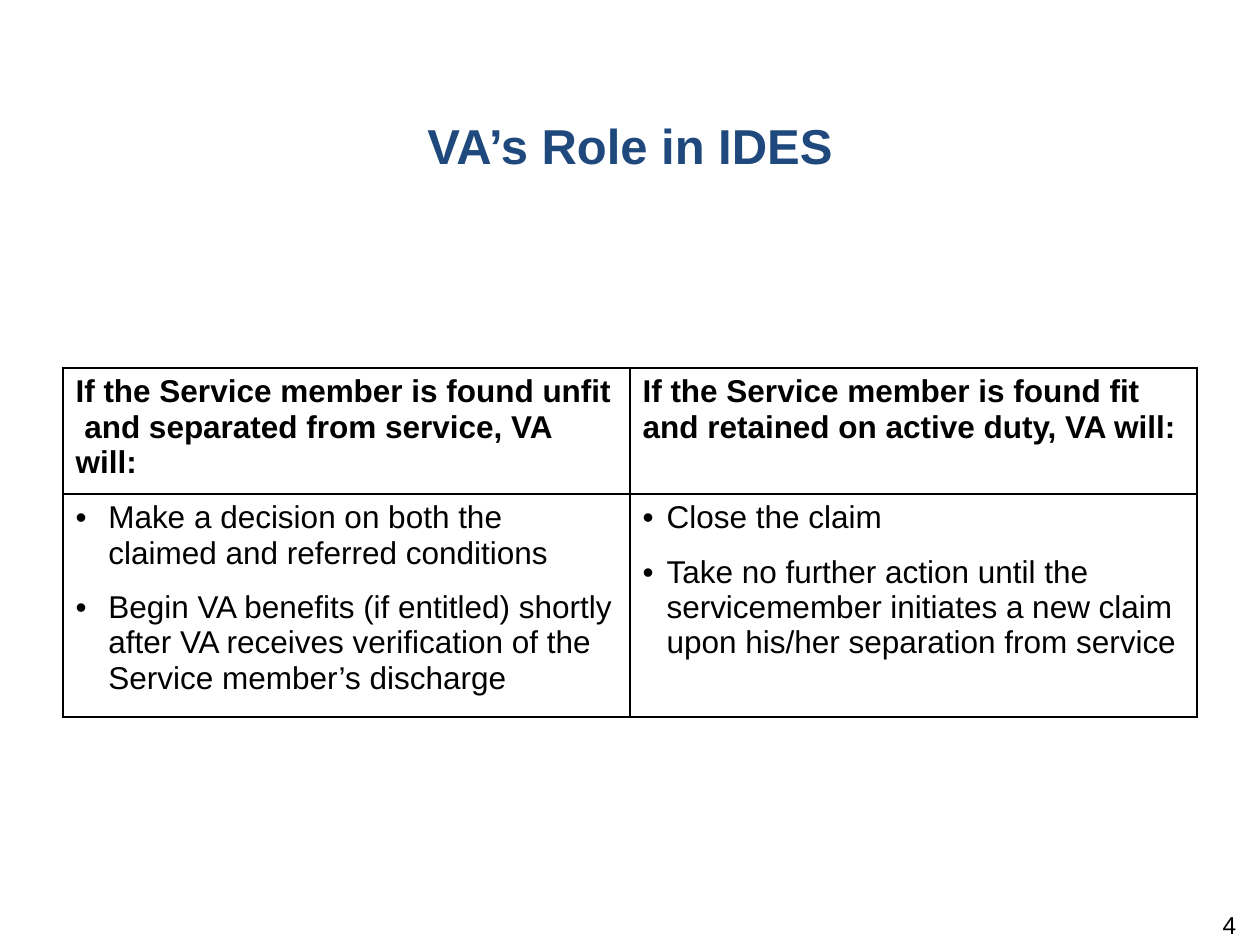
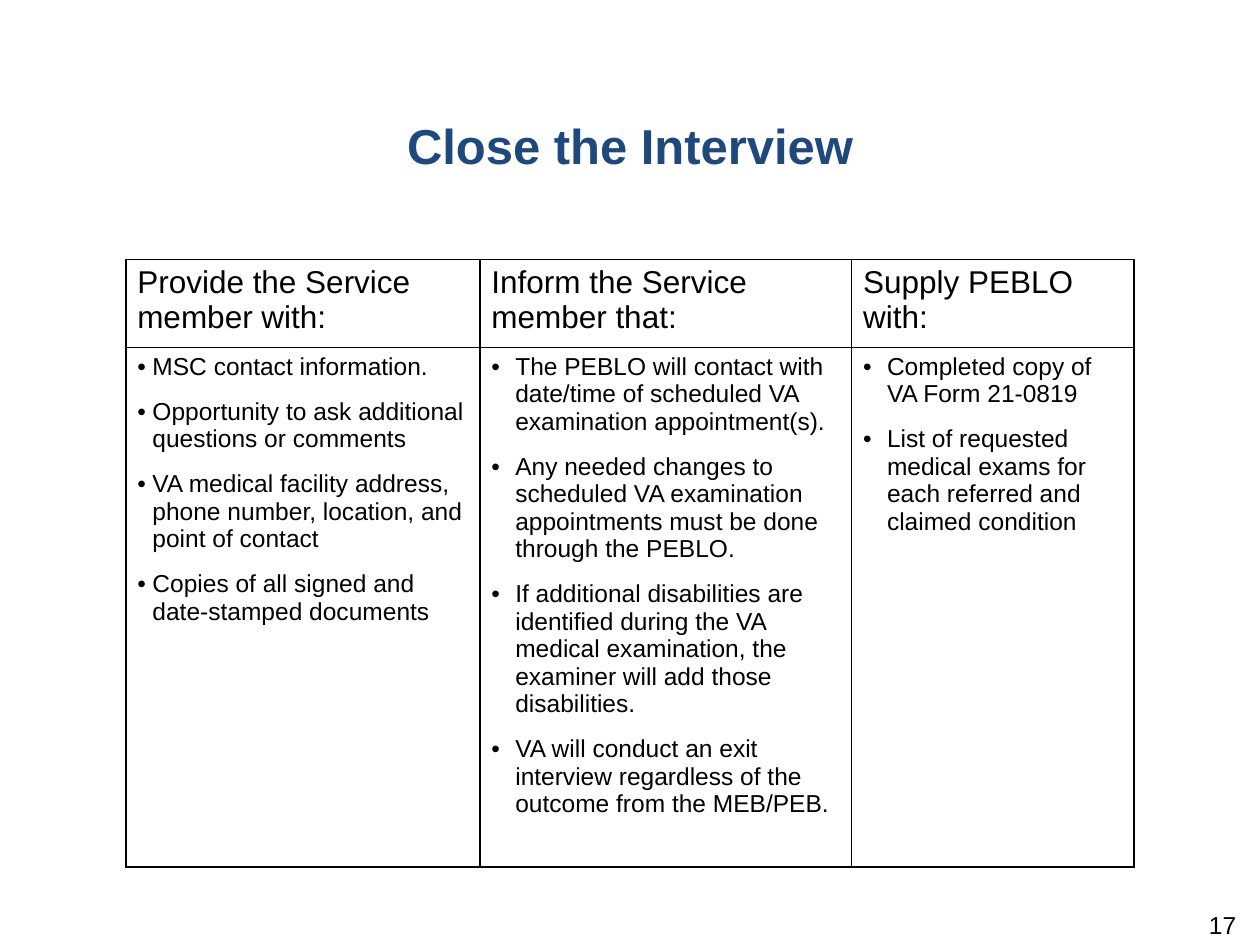
from lxml import etree
from pptx import Presentation
from pptx.dml.color import RGBColor
from pptx.enum.text import MSO_ANCHOR, MSO_AUTO_SIZE, PP_ALIGN
from pptx.oxml.ns import qn
from pptx.util import Inches, Pt

NAVY = RGBColor(0x1F, 0x49, 0x7D)
BLACK = RGBColor(0, 0, 0)
WHITE = RGBColor(0xFF, 0xFF, 0xFF)
FONT = "Arial"
TITLE_ONLY = 5


class Deck:
    def __init__(self):
        self.prs = Presentation()
        self.prs.slide_width = Inches(10)
        self.prs.slide_height = Inches(7.5)
        self.s = None

    # Text helpers
    def style(self, p, size, color=BLACK, bold=False):
        for r in p.runs:
            r.font.name = FONT
            r.font.size = Pt(size)
            r.font.bold = bold
            r.font.color.rgb = color

    def bullet(self, p, indent):
        pPr = p._p.get_or_add_pPr()
        pPr.set("marL", str(Inches(indent)))
        pPr.set("indent", str(-Inches(indent)))
        etree.SubElement(pPr, qn("a:buFont")).set("typeface", FONT)
        etree.SubElement(pPr, qn("a:buChar")).set("char", "•")

    # Slide with its title and page number
    def slide(self, title, number):
        self.s = self.prs.slides.add_slide(self.prs.slide_layouts[TITLE_ONLY])
        sp = self.s.shapes.title
        sp.left, sp.top = Inches(0), Inches(0.87)
        sp.width, sp.height = Inches(10), Inches(1.19)
        tf = sp.text_frame
        tf.text = title
        tf.auto_size = MSO_AUTO_SIZE.NONE
        tf.vertical_anchor = MSO_ANCHOR.TOP
        tf.paragraphs[0].alignment = PP_ALIGN.CENTER
        self.style(tf.paragraphs[0], 28, NAVY, True)
        self.page_number(number)

    def page_number(self, number):
        sp = self.s.shapes.add_textbox(Inches(7.58), Inches(7.22), Inches(2.33), Inches(0.4))
        tf = sp.text_frame
        tf.word_wrap = True
        tf.margin_top = Inches(0)
        tf.text = str(number)
        tf.paragraphs[0].alignment = PP_ALIGN.RIGHT
        self.style(tf.paragraphs[0], 14)

    # Bordered table: a heading and a bullet list in each column
    def table(self, left, top, widths, heights, columns, margins,
              head_bold, body_size, gap):
        frame = self.s.shapes.add_table(
            2, len(columns), Inches(left), Inches(top),
            Inches(sum(widths)), Inches(sum(heights)))
        table = frame.table
        table.first_row = table.horz_banding = False
        for row, height in zip(table.rows, heights):
            row.height = Inches(height)
        for i, (heading, indent, items) in enumerate(columns):
            table.columns[i].width = Inches(widths[i])
            head, body = table.cell(0, i), table.cell(1, i)
            for cell in (head, body):
                self.frame_cell(cell, margins)
            head.text_frame.text = heading
            self.style(head.text_frame.paragraphs[0], 18, bold=head_bold)
            self.bullet_list(body.text_frame, items, indent, body_size, gap)

    def frame_cell(self, cell, margins):
        cell.margin_left = cell.margin_right = Inches(margins[0])
        cell.margin_top = cell.margin_bottom = Inches(margins[1])
        tcPr = cell._tc.get_or_add_tcPr()
        for side in ("lnL", "lnR", "lnT", "lnB"):
            ln = etree.SubElement(tcPr, qn(f"a:{side}"), w=str(Pt(1)))
            fill = etree.SubElement(ln, qn("a:solidFill"))
            etree.SubElement(fill, qn("a:srgbClr"), val=str(BLACK))
        cell.fill.solid()
        cell.fill.fore_color.rgb = WHITE

    def bullet_list(self, tf, items, indent, size, gap):
        for i, item in enumerate(items):
            p = tf.add_paragraph() if i else tf.paragraphs[0]
            p.text = item
            self.bullet(p, indent)
            if i:
                p.space_before = Pt(gap)
            self.style(p, size)


def main():
    deck = Deck()

    # Outcomes by fitness finding
    deck.slide("VA’s Role in IDES", 4)
    deck.table(0.5, 2.92, [4.5, 4.5], [0.83, 1.77], [
        ("If the Service member is found unfit  and separated from service, VA will:", 0.26, [
            "Make a decision on both the claimed and referred conditions",
            "Begin VA benefits (if entitled) shortly after VA receives verification "
            "of the Service member’s discharge",
        ]),
        ("If the Service member is found fit and retained on active duty, VA will:", 0.19, [
            "Close the claim",
            "Take no further action until the servicemember initiates a new claim "
            "upon his/her separation from service",
        ]),
    ], margins=(0.1, 0.05), head_bold=True, body_size=18, gap=11)

    # Interview closing steps
    deck.slide("Close the Interview", 17)
    deck.table(1, 2.06, [2.81, 2.95, 2.24], [0.7, 4.12], [
        ("Provide the Service member with:", 0.12, [
            "MSC contact information.",
            "Opportunity to ask additional questions or comments",
            "VA medical facility address, phone number, location, and point of contact",
            "Copies of all signed and date-stamped documents",
        ]),
        ("Inform the Service member that:", 0.19, [
            "The PEBLO will contact with date/time of scheduled VA examination appointment(s).",
            "Any needed changes to scheduled VA examination appointments must be done "
            "through the PEBLO.",
            "If additional disabilities are identified during the VA medical examination, "
            "the examiner will add those disabilities.",
            "VA will conduct an exit interview regardless of the outcome from the MEB/PEB.",
        ]),
        ("Supply PEBLO with:", 0.19, [
            "Completed copy of VA Form 21-0819",
            "List of requested medical exams for each referred and claimed condition",
        ]),
    ], margins=(0.09, 0.04), head_bold=False, body_size=14, gap=10)

    deck.prs.save("out.pptx")


if __name__ == "__main__":
    main()
